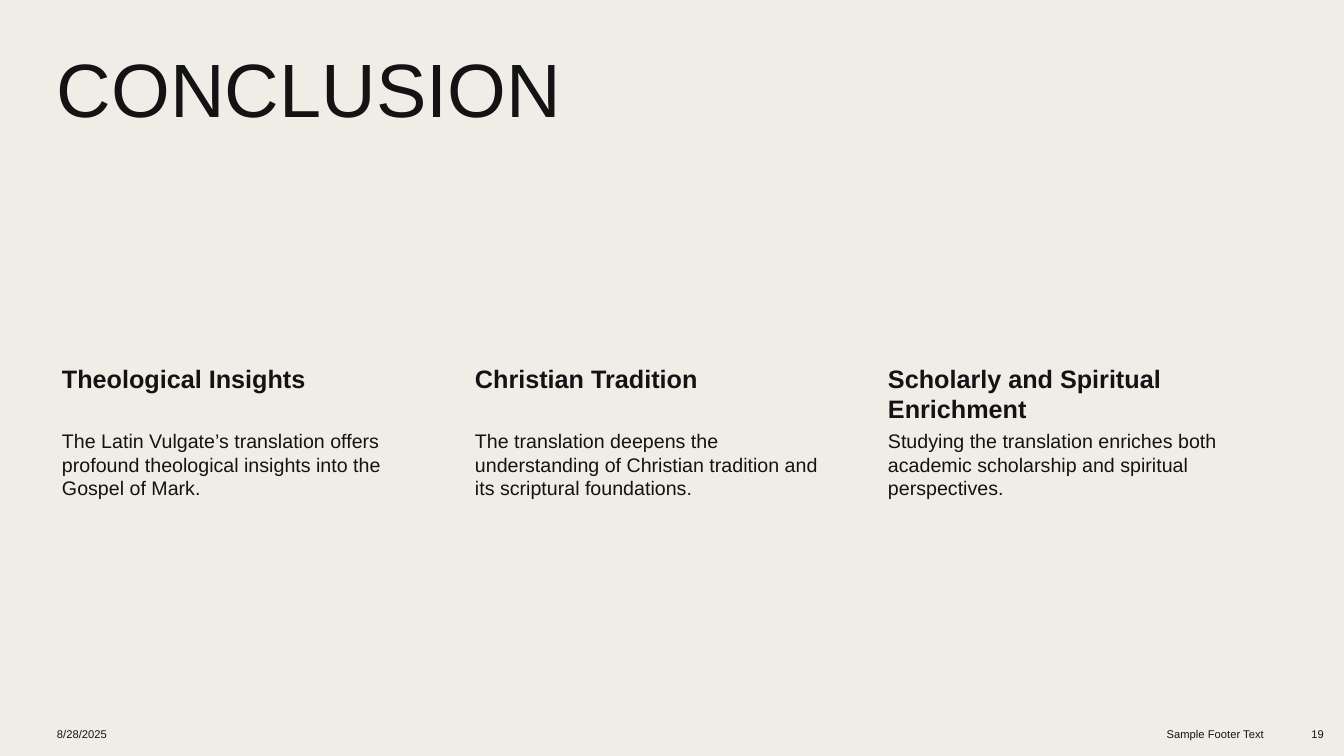
from pptx import Presentation
from pptx.dml.color import RGBColor
from pptx.enum.text import MSO_ANCHOR, PP_ALIGN
from pptx.util import Pt

PX = 914400 / 100.8
INK = RGBColor(0x13, 0x13, 0x13)
PAPER = RGBColor(0xF0, 0xED, 0xE6)

COLUMNS = [
    ("Theological Insights",
     "The Latin Vulgate’s translation offers profound theological insights into the Gospel of Mark."),
    ("Christian Tradition",
     "The translation deepens the understanding of Christian tradition and its scriptural foundations."),
    ("Scholarly and Spiritual Enrichment",
     "Studying the translation enriches both academic scholarship and spiritual perspectives."),
]
LEFT, PITCH, COLUMN_WIDTH = 47, 413, 375


def px(n):
    return round(n * PX)


class Deck:
    font = "Arial"

    def __init__(self, width, height):
        self.prs = Presentation()
        self.prs.slide_width, self.prs.slide_height = px(width), px(height)

    def add_slide(self):
        self.s = self.prs.slides.add_slide(self.prs.slide_layouts[6])
        fill = self.s.background.fill
        fill.solid()
        fill.fore_color.rgb = PAPER

    def text(self, text, x, y, w, h, size, bold=False, insets=(10, 5, 10, 5),
             align=PP_ALIGN.LEFT, anchor=MSO_ANCHOR.TOP, spacing=None):
        tf = self.s.shapes.add_textbox(px(x), px(y), px(w), px(h)).text_frame
        tf.word_wrap = True
        tf.vertical_anchor = anchor
        tf.margin_left, tf.margin_top, tf.margin_right, tf.margin_bottom = map(px, insets)
        p = tf.paragraphs[0]
        p.text = text
        p.alignment = align
        p.line_spacing = spacing
        p.font.name = self.font
        p.font.size = Pt(size)
        p.font.bold = bold
        p.font.color.rgb = INK

    def column(self, heading, body, x):
        self.text(heading, x, 360, COLUMN_WIDTH, 67, 18, bold=True, insets=(15, 3, 3, 3))
        self.text(body, x, 427, COLUMN_WIDTH, 244, 14, insets=(15, 2, 2, 2))

    def footer(self, text, x, w, align):
        self.text(text, x, 716, w, 37, 8, align=align, anchor=MSO_ANCHOR.MIDDLE)


def main():
    deck = Deck(1344, 756)
    deck.add_slide()
    deck.text("CONCLUSION", LEFT, 47, 1200, 179, 54, spacing=0.9)
    for i, (heading, body) in enumerate(COLUMNS):
        deck.column(heading, body, LEFT + i * PITCH)
    deck.footer("8/28/2025", LEFT, 313, PP_ALIGN.LEFT)
    deck.footer("Sample Footer Text", 981, 293, PP_ALIGN.RIGHT)
    deck.footer("19", 1284, 50, PP_ALIGN.RIGHT)
    deck.prs.save("out.pptx")


if __name__ == "__main__":
    main()
